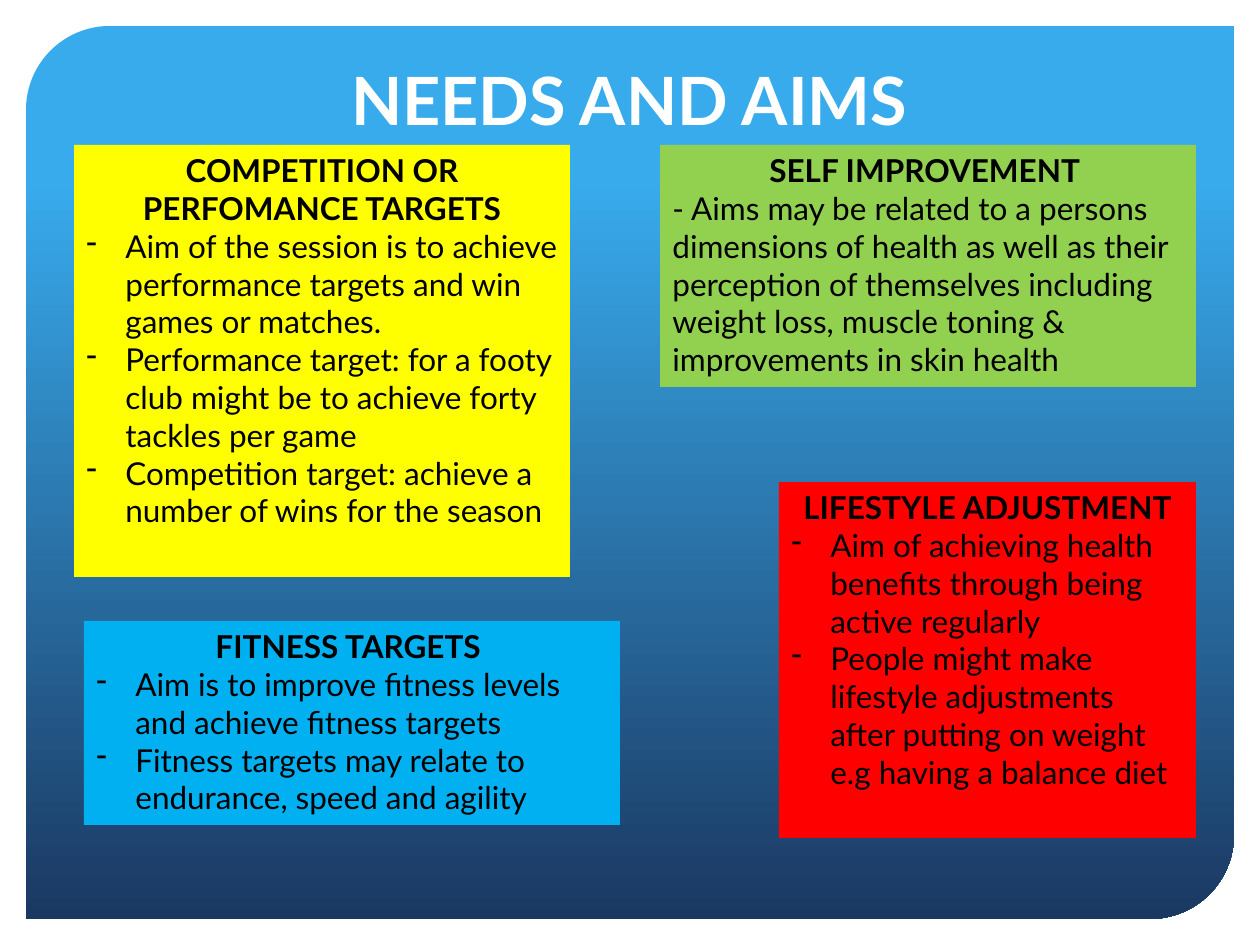
from pptx import Presentation
from pptx.dml.color import RGBColor
from pptx.enum.shapes import MSO_SHAPE
from pptx.enum.text import MSO_ANCHOR, MSO_AUTO_SIZE, PP_ALIGN
from pptx.oxml.ns import qn
from pptx.util import Emu, Pt
from lxml import etree

RECT, PANEL = MSO_SHAPE.RECTANGLE, MSO_SHAPE.ROUND_2_DIAG_RECTANGLE
TOP, BOTTOM = MSO_ANCHOR.TOP, MSO_ANCHOR.BOTTOM
LEFT, CENTER = PP_ALIGN.LEFT, PP_ALIGN.CENTER
FIXED = MSO_AUTO_SIZE.NONE

WHITE = RGBColor(0xFF, 0xFF, 0xFF)
BLACK = RGBColor(0x00, 0x00, 0x00)
SKY = RGBColor(0x38, 0xAB, 0xED)
NAVY = RGBColor(0x1B, 0x38, 0x61)
YELLOW = RGBColor(0xFF, 0xFF, 0x00)
GREEN = RGBColor(0x92, 0xD0, 0x50)
BLUE = RGBColor(0x00, 0xB0, 0xF0)
RED = RGBColor(0xFF, 0x00, 0x00)

FONT = "Lato"
INDENT = 39
TITLE = "NEEDS AND AIMS"

# (place, fill, heading, dashed list?, lines)
BOXES = [
    ((74, 145, 496, 432), YELLOW, "COMPETITION OR PERFOMANCE TARGETS", True, [
        "Aim of the session is to achieve performance targets and win games or matches.",
        "Performance target: for a footy club might be to achieve forty tackles per game",
        "Competition target: achieve a number of wins for the season",
    ]),
    ((660, 145, 536, 242), GREEN, "SELF IMPROVEMENT ", False, [
        "- Aims may be related to a persons dimensions of health as well as their "
        "perception of themselves including weight loss, muscle toning & "
        "improvements in skin health",
    ]),
    ((84, 621, 536, 204), BLUE, "FITNESS TARGETS ", True, [
        "Aim is to improve fitness levels and achieve fitness targets",
        "Fitness targets may relate to endurance, speed and agility",
    ]),
    ((779, 482, 417, 356), RED, "LIFESTYLE ADJUSTMENT", True, [
        "Aim of achieving health benefits through being active regularly",
        "People might make lifestyle adjustments after putting on weight "
        "e.g having a balance diet",
    ]),
]


def px(n):
    return Emu(round(n * 914400 / 126))


def style(para, size, color, bold, align):
    para.alignment = align
    for run in para.runs:
        font = run.font
        font.name, font.size, font.bold = FONT, Pt(size), bold
        font.color.rgb = color


def dash(para):
    props = para._p.get_or_add_pPr()
    props.set("marL", str(px(INDENT)))
    props.set("indent", str(-px(INDENT)))
    etree.SubElement(props, qn("a:buChar")).set("char", "-")


def add_shape(slide, kind, place):
    shape = slide.shapes.add_shape(kind, *map(px, place))
    shape.shadow.inherit = False
    shape.line.fill.background()
    return shape


def add_panel(slide):
    panel = add_shape(slide, PANEL, (26, 26, 1208, 893))
    panel.adjustments[0], panel.adjustments[1] = 0.094, 0
    panel.fill.gradient()
    panel.fill.gradient_angle = 270
    for stop, (spot, color) in zip(panel.fill.gradient_stops, [(0.17, SKY), (1, NAVY)]):
        stop.position = spot
        stop.color.rgb = color
    return panel


def add_title(slide):
    title = slide.shapes.title
    title.left, title.top, title.width, title.height = map(px, (107, 53, 1045, 92))
    frame = title.text_frame
    frame.text = TITLE
    frame.auto_size, frame.vertical_anchor = FIXED, BOTTOM
    style(frame.paragraphs[0], 38, WHITE, True, CENTER)
    return title


def add_box(slide, place, fill, head, dashed, lines):
    box = add_shape(slide, RECT, place)
    box.fill.solid()
    box.fill.fore_color.rgb = fill
    frame = box.text_frame
    frame.word_wrap, frame.auto_size, frame.vertical_anchor = True, FIXED, TOP
    frame.text = "\n".join([head, *lines])
    first, *rest = frame.paragraphs
    style(first, 18, BLACK, True, CENTER)
    for para in rest:
        if dashed:
            dash(para)
        style(para, 18, BLACK, False, LEFT)


def main():
    deck = Presentation()
    deck.slide_width, deck.slide_height = px(1260), px(945)
    slide = deck.slides.add_slide(deck.slide_layouts[5])
    panel = add_panel(slide)
    title = add_title(slide)
    title.element.addprevious(panel.element)
    for box in BOXES:
        add_box(slide, *box)
    deck.save("out.pptx")


if __name__ == "__main__":
    main()
